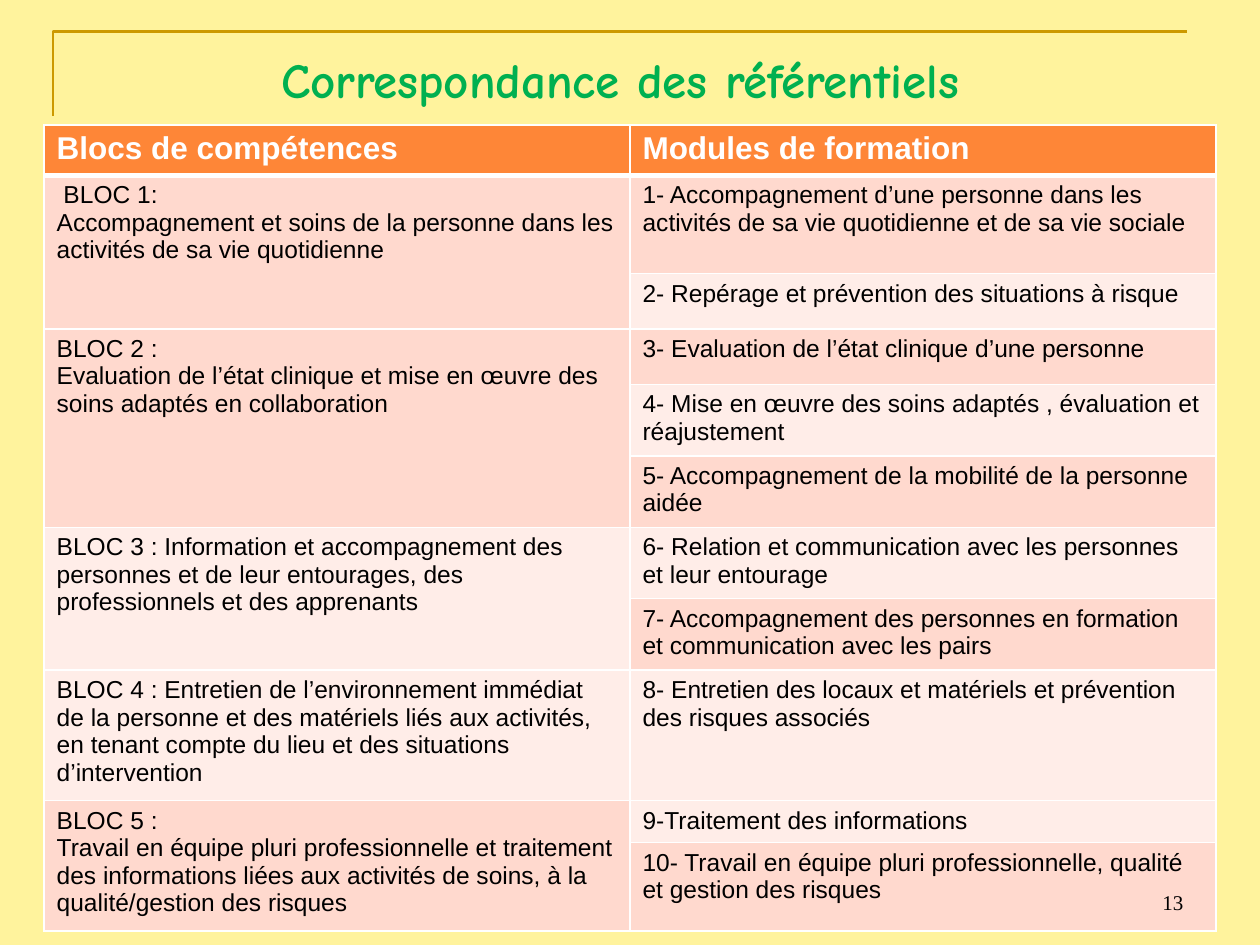
from lxml import etree
from pptx import Presentation
from pptx.dml.color import RGBColor
from pptx.enum.text import MSO_ANCHOR, PP_ALIGN
from pptx.oxml.ns import qn
from pptx.util import Inches, Pt

LEFT, CENTER, RIGHT = PP_ALIGN.LEFT, PP_ALIGN.CENTER, PP_ALIGN.RIGHT
MIDDLE, BOTTOM = MSO_ANCHOR.MIDDLE, MSO_ANCHOR.BOTTOM

TITLE = "Correspondance des référentiels"
NUMBER = "13"
HEADS = ["Blocs de compétences", "Modules de formation"]
BLOCKS = [
    ([" BLOC 1:",
      "Accompagnement et soins de la personne dans les activités de sa vie quotidienne"], "dark",
     [("1- Accompagnement d’une personne dans les activités de sa vie quotidienne et de sa vie sociale",
       "dark", 0.78),
      ("2- Repérage et prévention des situations à risque", "pale", 0.44)]),
    (["BLOC 2 :",
      "Evaluation de l’état clinique et mise en œuvre des soins adaptés en collaboration"], "dark",
     [("3- Evaluation de l’état clinique d’une personne", "dark", 0.44),
      ("4- Mise en œuvre des soins adaptés , évaluation et réajustement", "pale", 0.55),
      ("5- Accompagnement de la mobilité de la personne aidée", "dark", 0.55)]),
    (["BLOC 3 : Information et accompagnement des personnes et de leur entourages, "
      "des professionnels et des apprenants"], "pale",
     [("6- Relation et communication avec les personnes et leur entourage", "pale", 0.55),
      ("7- Accompagnement des personnes en formation et communication avec les pairs", "dark", 0.55)]),
    (["BLOC 4 : Entretien de l’environnement immédiat de la personne et des matériels liés "
      "aux activités, en tenant compte du lieu et des situations d’intervention"], "pale",
     [("8- Entretien des locaux et matériels et prévention des risques associés", "pale", 1.01)]),
    (["BLOC 5 :",
      "Travail en équipe pluri professionnelle et traitement des informations liées aux activités "
      "de soins, à la qualité/gestion des risques"], "dark",
     [("9-Traitement des informations", "pale", 0.33),
      ("10- Travail en équipe pluri professionnelle, qualité et gestion des risques", "dark", 0.65)]),
]
HEAD_H = 0.39
FRAME = [(0.42, 0.92), (0.42, 0.25), (9.42, 0.25)]
THEME = {
    "page": "FFF39D", "frame": "CC9900", "edge": "FFFFFF",
    "head": "FE8637", "dark": "FFD9CE", "pale": "FFEDE8",
    "title": ("Comic Neue", 28, "00B050", True),
    "label": ("Arial", 18, "FFFFFF", True),
    "body": ("Arial", 14, "000000", False),
    "number": ("Times New Roman", 12, "000000", False),
}


def color(name):
    return RGBColor.from_string(THEME[name])


def write(frame, lines, style, align=LEFT):
    face, size, ink, bold = THEME[style]
    frame.text = "\n".join(lines)
    for par in frame.paragraphs:
        par.alignment = align
        par.font.name, par.font.size, par.font.bold = face, Pt(size), bold
        par.font.color.rgb = RGBColor.from_string(ink)


def add_text(slide, box, text, style, align, anchor):
    frame = slide.shapes.add_textbox(*map(Inches, box)).text_frame
    frame.word_wrap = True
    frame.vertical_anchor = anchor
    write(frame, [text], style, align)


def fill_cell(cell, lines, fill, style, base=1):
    write(cell.text_frame, lines, style)
    paint(cell, fill, base)


def paint(cell, fill, base=1):
    props = cell._tc.get_or_add_tcPr()
    for side, width in (("L", 1), ("R", 1), ("T", 1), ("B", base)):
        line = etree.SubElement(props, qn(f"a:ln{side}"), w=str(Pt(width)))
        solid = etree.SubElement(line, qn("a:solidFill"))
        etree.SubElement(solid, qn("a:srgbClr"), val=THEME["edge"])
    cell.fill.solid()
    cell.fill.fore_color.rgb = color(fill)


def add_frame(slide):
    start, *rest = [(Inches(x), Inches(y)) for x, y in FRAME]
    pen = slide.shapes.build_freeform(*start)
    pen.add_line_segments(rest, close=False)
    shape = pen.convert_to_shape()
    shape.shadow.inherit = False
    shape.fill.background()
    shape.line.color.rgb = color("frame")
    shape.line.width = Pt(1.5)


def add_grid(slide):
    sizes = [HEAD_H] + [high for _, _, mods in BLOCKS for _, _, high in mods]
    box = map(Inches, (0.35, 0.99, 9.3, sum(sizes)))
    table = slide.shapes.add_table(len(sizes), len(HEADS), *box).table
    for row, size in zip(table.rows, sizes):
        row.height = Inches(size)
    for col, head in enumerate(HEADS):
        fill_cell(table.cell(0, col), [head], "head", "label", 3)
    top = 1
    for lines, shade, mods in BLOCKS:
        last = top + len(mods) - 1
        for row, (text, tint, _) in enumerate(mods, top):
            fill_cell(table.cell(row, 1), [text], tint, "body")
            if row > top:
                paint(table.cell(row, 0), shade)
        fill_cell(table.cell(top, 0), lines, shade, "body")
        if last > top:
            table.cell(top, 0).merge(table.cell(last, 0))
        top = last + 1


def main():
    """Build the slide that matches skill blocks with training modules."""
    deck = Presentation()
    deck.slide_width, deck.slide_height = Inches(10), Inches(7.5)
    slide = deck.slides.add_slide(deck.slide_layouts[6])
    slide.background.fill.solid()
    slide.background.fill.fore_color.rgb = color("page")
    add_frame(slide)
    add_text(slide, (0.5, 0.3, 8.84, 0.65), TITLE, "title", CENTER, MIDDLE)
    add_grid(slide)
    add_text(slide, (7.17, 6.83, 2.32, 0.48), NUMBER, "number", RIGHT, BOTTOM)
    deck.save("out.pptx")


if __name__ == "__main__":
    main()
